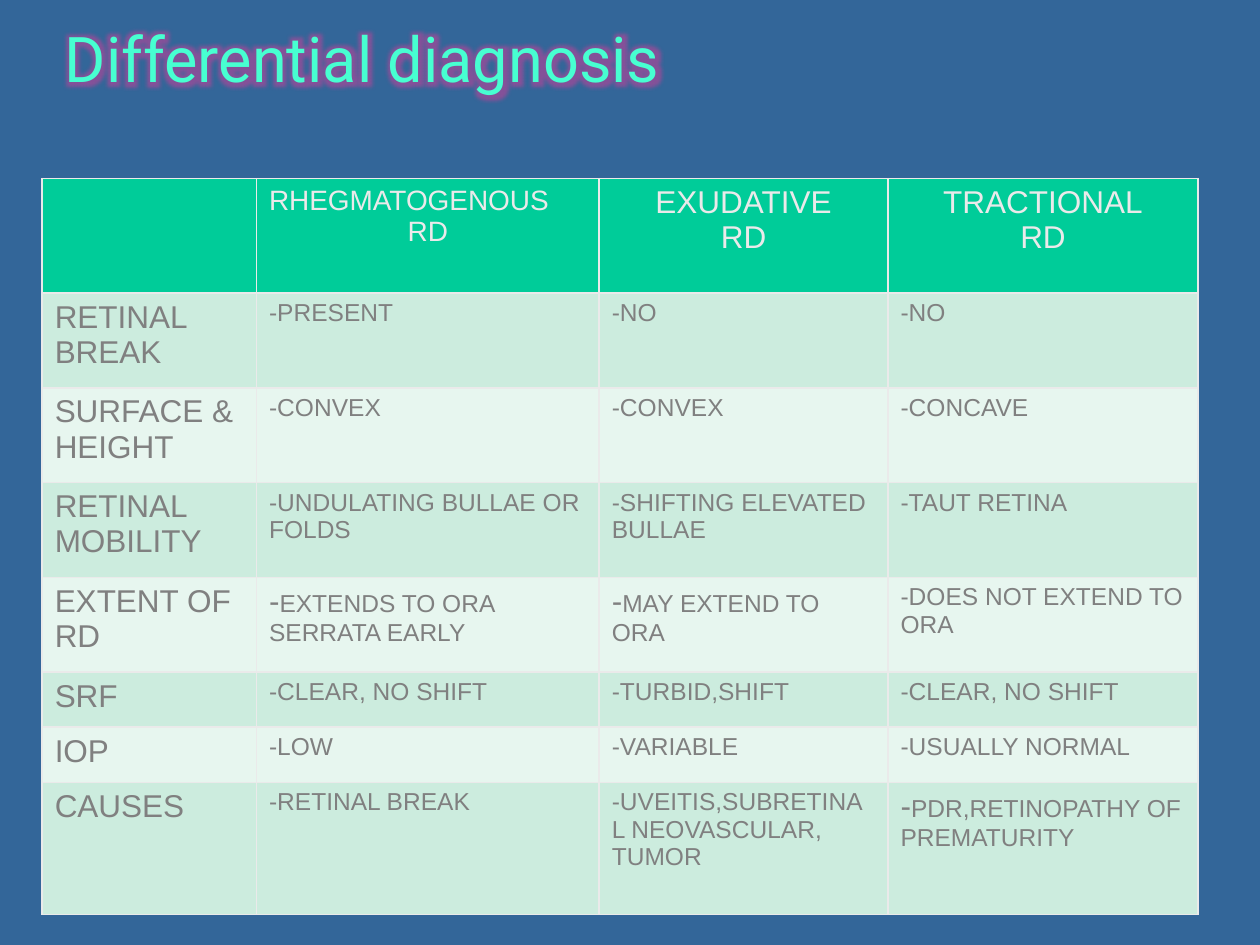
from dataclasses import dataclass

from lxml.etree import SubElement
from pptx import Presentation
from pptx.dml.color import RGBColor
from pptx.enum.text import MSO_ANCHOR, PP_ALIGN
from pptx.oxml import parse_xml
from pptx.oxml.ns import nsdecls, qn
from pptx.util import Cm, Pt

COLORS = {
    "background": "336699",
    "title": "47FFD1",
    "glow": "FF3399",
    "header": "00CC99",
    "light": "EAEAEA",
    "text": "808080",
    "band_dark": "CCECDE",
    "band_pale": "E7F6EF",
}
COL_WIDTHS = (4.32, 6.91, 5.82, 6.25)


@dataclass
class Heading:
    name: str
    size: int = 18
    align: PP_ALIGN = PP_ALIGN.CENTER


@dataclass
class Feature:
    label: str
    findings: tuple[str, str, str]
    height: float = 1.91
    large_dashes: tuple[int, ...] = ()  # findings that open with a larger dash


HEADINGS = (
    Heading("RHEGMATOGENOUS", 16, PP_ALIGN.LEFT),
    Heading("EXUDATIVE"),
    Heading("TRACTIONAL"),
)
FEATURES = (
    Feature("RETINAL BREAK", ("PRESENT", "NO", "NO")),
    Feature("SURFACE & HEIGHT", ("CONVEX", "CONVEX", "CONCAVE")),
    Feature("RETINAL MOBILITY", ("UNDULATING BULLAE OR FOLDS",
                                 "SHIFTING ELEVATED BULLAE", "TAUT RETINA")),
    Feature("EXTENT OF RD", ("EXTENDS TO ORA SERRATA EARLY", "MAY EXTEND TO ORA",
                             "DOES NOT EXTEND TO ORA"), large_dashes=(0, 1)),
    Feature("SRF", ("CLEAR, NO SHIFT", "TURBID,SHIFT", "CLEAR, NO SHIFT"), 1.11),
    Feature("IOP", ("LOW", "VARIABLE", "USUALLY NORMAL"), 1.11),
    Feature("CAUSES", ("RETINAL BREAK", "UVEITIS,SUBRETINAL NEOVASCULAR, TUMOR",
                       "PDR,RETINOPATHY OF PREMATURITY"), 2.67, (2,)),
)


def rgb(name: str) -> RGBColor:
    return RGBColor.from_string(COLORS[name])


def add_run(p, text: str, size: int, color: str, font: str = "Arial"):
    r = p.add_run()
    r.text = text
    r.font.size = Pt(size)
    r.font.color.rgb = rgb(color)
    r.font.name = font
    return r


def add_glow(r, radius: int) -> None:
    effects = parse_xml(
        f'<a:effectLst {nsdecls("a")}><a:glow rad="{Pt(radius)}">'
        f'<a:srgbClr val="{COLORS["glow"]}"><a:alpha val="40000"/></a:srgbClr>'
        '</a:glow></a:effectLst>')
    r.font.fill._xPr.find(qn("a:solidFill")).addnext(effects)


def style_cell(cell, fill: str) -> None:
    tcPr = cell._tc.get_or_add_tcPr()
    for side in ("a:lnL", "a:lnR", "a:lnT", "a:lnB"):
        ln = SubElement(tcPr, qn(side), w=str(Pt(1)))
        solid = SubElement(ln, qn("a:solidFill"))
        SubElement(solid, qn("a:srgbClr"), val=COLORS["light"])
    cell.fill.solid()
    cell.fill.fore_color.rgb = rgb(fill)


def fill_heading(cell, heading: Heading) -> None:
    p = cell.text_frame.paragraphs[0]
    p.alignment = heading.align
    add_run(p, heading.name, heading.size, "light")
    p = cell.text_frame.add_paragraph()
    p.alignment = PP_ALIGN.CENTER
    add_run(p, "RD", heading.size, "light")


def fill_feature(table, row: int, feature: Feature) -> None:
    table.rows[row].height = Cm(feature.height)
    for col in range(len(COL_WIDTHS)):
        style_cell(table.cell(row, col), "band_dark" if row % 2 else "band_pale")
    add_run(table.cell(row, 0).text_frame.paragraphs[0], feature.label, 18, "text")
    for i, finding in enumerate(feature.findings):
        p = table.cell(row, i + 1).text_frame.paragraphs[0]
        if i in feature.large_dashes:
            add_run(p, "-", 18, "text")
            add_run(p, finding, 14, "text")
        else:
            add_run(p, "-" + finding, 14, "text")


prs = Presentation()
prs.slide_width, prs.slide_height = Cm(25.4), Cm(19.05)
s = prs.slides.add_slide(prs.slide_layouts[6])
s.background.fill.solid()
s.background.fill.fore_color.rgb = rgb("background")

# Title with a soft glow
sp = s.shapes.add_textbox(Cm(1.06), Cm(-0.43), Cm(22.23), Cm(3.18))
tf = sp.text_frame
tf.word_wrap = True
tf.vertical_anchor = MSO_ANCHOR.MIDDLE
add_glow(add_run(tf.paragraphs[0], "Differential diagnosis", 36, "title", "Roboto"), 11)

# Comparison table
table = s.shapes.add_table(len(FEATURES) + 1, len(COL_WIDTHS), Cm(0.85), Cm(3.6),
                           Cm(23.3), Cm(14.83)).table
for column, width in zip(table.columns, COL_WIDTHS):
    column.width = Cm(width)

# Header row
table.rows[0].height = Cm(2.31)
for col in range(len(COL_WIDTHS)):
    style_cell(table.cell(0, col), "header")
for col, heading in enumerate(HEADINGS, 1):
    fill_heading(table.cell(0, col), heading)

# Feature rows
for row, feature in enumerate(FEATURES, 1):
    fill_feature(table, row, feature)

prs.save("out.pptx")
